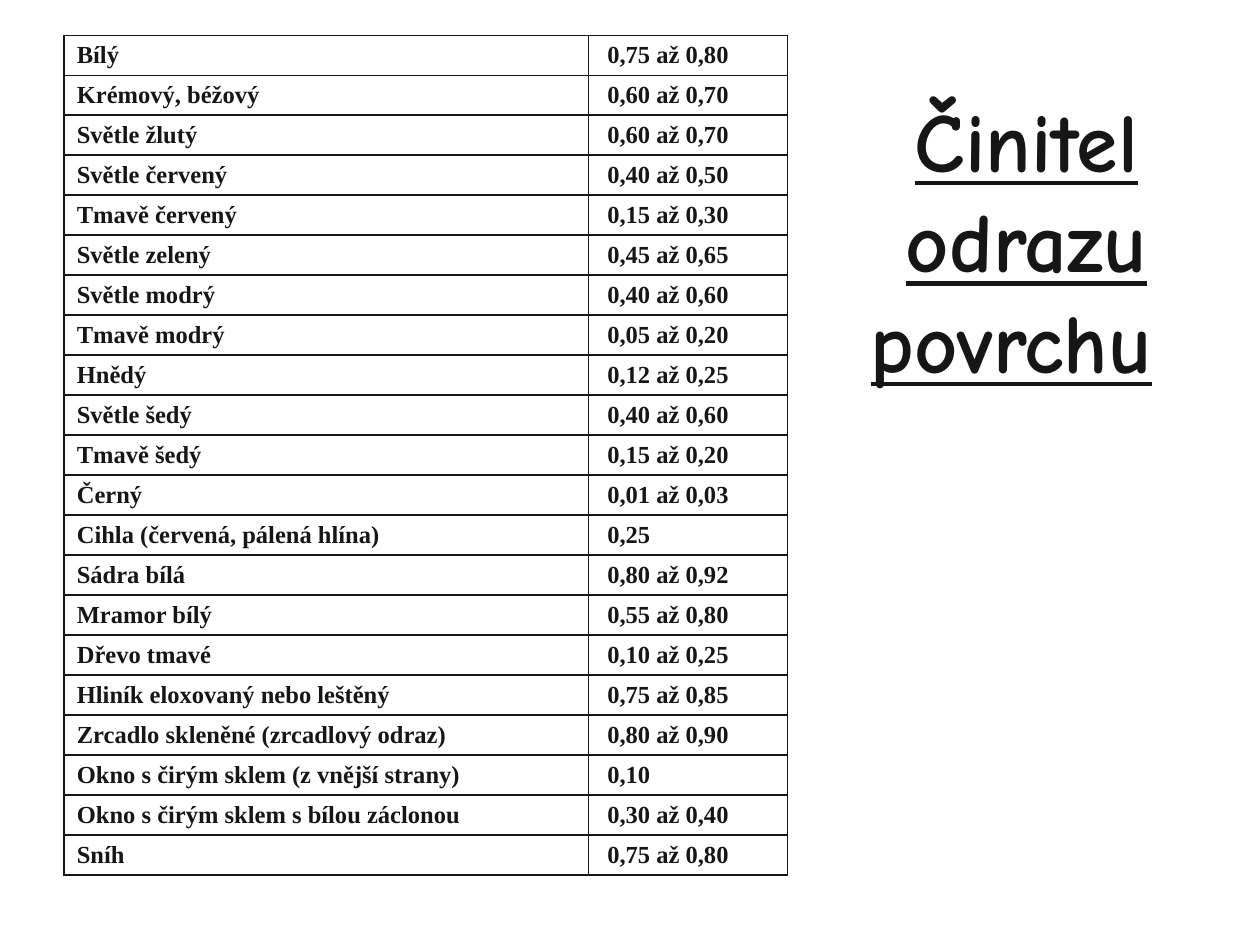
from pptx import Presentation
from pptx import util as u
from pptx.dml import color
from pptx.enum import text
from pptx.oxml import parse_xml
from pptx.oxml import ns

INK = "161616"
PAPER = "FFFFFF"
BORDER = (
    '<a:{side} {ns} w="12700"><a:solidFill><a:srgbClr val="{ink}"/></a:solidFill></a:{side}>'
)
REFLECTANCES = [
    ("Bílý", "0,75 až 0,80"),
    ("Krémový, béžový", "0,60 až 0,70"),
    ("Světle žlutý", "0,60 až 0,70"),
    ("Světle červený", "0,40 až 0,50"),
    ("Tmavě červený", "0,15 až 0,30"),
    ("Světle zelený", "0,45 až 0,65"),
    ("Světle modrý", "0,40 až 0,60"),
    ("Tmavě modrý", "0,05 až 0,20"),
    ("Hnědý", "0,12 až 0,25"),
    ("Světle šedý", "0,40 až 0,60"),
    ("Tmavě šedý", "0,15 až 0,20"),
    ("Černý", "0,01 až 0,03"),
    ("Cihla (červená, pálená hlína)", "0,25"),
    ("Sádra bílá", "0,80 až 0,92"),
    ("Mramor bílý", "0,55 až 0,80"),
    ("Dřevo tmavé", "0,10 až 0,25"),
    ("Hliník eloxovaný nebo leštěný", "0,75 až 0,85"),
    ("Zrcadlo skleněné (zrcadlový odraz)", "0,80 až 0,90"),
    ("Okno s čirým sklem (z vnější strany)", "0,10"),
    ("Okno s čirým sklem s bílou záclonou", "0,30 až 0,40"),
    ("Sníh", "0,75 až 0,80"),
]


def rgb(value):
    return color.RGBColor.from_string(value)


def apply(target, values):
    for name, value in values.items():
        setattr(target, name, value)


class SlideBuilder:
    """Holds the text styles and the current slide."""

    title_font = {"name": "Comic Neue", "size": u.Pt(48), "bold": True}
    cell_font = {"name": "Times New Roman", "size": u.Pt(14), "bold": True}

    def __init__(self, slide):
        self.slide = slide

    def add_run(self, paragraph, content, font):
        run = paragraph.add_run()
        run.text = content
        apply(run.font, font)
        run.font.color.rgb = rgb(INK)

    def title(self, content, left, top, width, height):
        shape = self.slide.shapes.add_textbox(*map(u.Inches, (left, top, width, height)))
        apply(shape.text_frame, {"word_wrap": True, "vertical_anchor": text.MSO_ANCHOR.MIDDLE})
        paragraph = shape.text_frame.paragraphs[0]
        paragraph.alignment = text.PP_ALIGN.CENTER
        self.add_run(paragraph, content, {**self.title_font, "underline": True})
        self.add_run(paragraph, " ", self.title_font)

    def cell(self, cell, content, indent):
        apply(cell, {
            "vertical_anchor": text.MSO_ANCHOR.MIDDLE,
            "margin_left": u.Inches(indent),
            "margin_right": u.Inches(0.1),
            "margin_top": u.Inches(0.04),
            "margin_bottom": u.Inches(0.04),
        })
        self.add_run(cell.text_frame.paragraphs[0], content, self.cell_font)
        properties = cell._tc.get_or_add_tcPr()
        for side in ("lnL", "lnR", "lnT", "lnB"):
            properties.append(parse_xml(BORDER.format(side=side, ns=ns.nsdecls("a"), ink=INK)))
        cell.fill.solid()
        cell.fill.fore_color.rgb = rgb(PAPER)

    def table(self, rows, left, top, widths, height, indents):
        shape = self.slide.shapes.add_table(
            len(rows), len(widths),
            *map(u.Inches, (left, top, sum(widths), height)),
        )
        table = shape.table
        apply(table, {"first_row": False, "horz_banding": False})
        for column, width in zip(table.columns, widths):
            column.width = u.Inches(width)
        for row, contents in zip(table.rows, rows):
            for cell, content, indent in zip(row.cells, contents, indents):
                self.cell(cell, content, indent)


def main():
    presentation = Presentation()
    apply(presentation, {"slide_width": u.Inches(10), "slide_height": u.Inches(7.5)})
    builder = SlideBuilder(presentation.slides.add_slide(presentation.slide_layouts[6]))
    builder.table(REFLECTANCES, 0.51, 0.28, (4.16, 1.58), 6.67, (0.1, 0.15))
    builder.title("Činitel odrazu povrchu", 6.57, 0.6, 3.15, 2.6)
    presentation.save("out.pptx")


if __name__ == "__main__":
    main()
